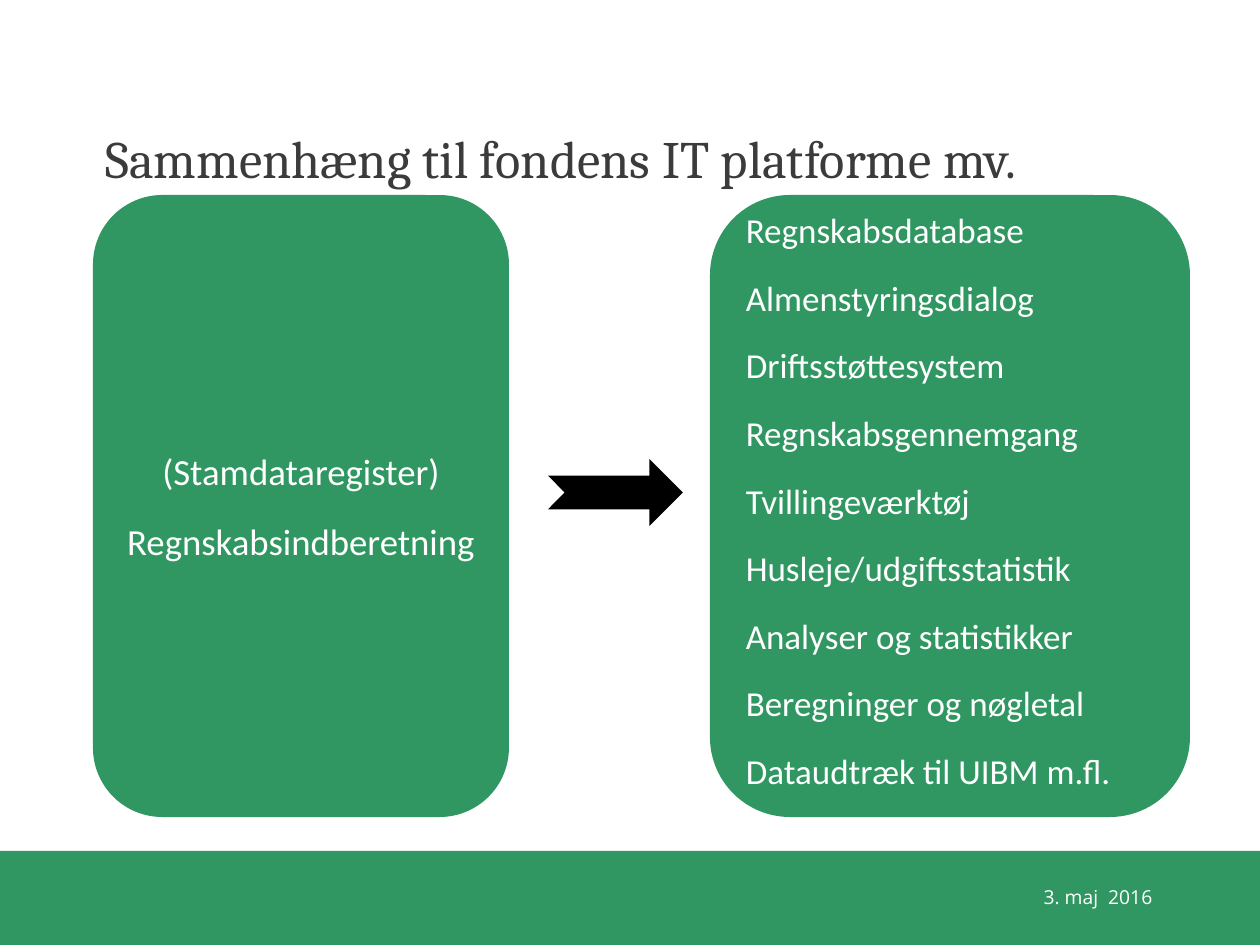
"""Build a slide showing how reported accounts feed the fund's IT platforms."""
from pptx import Presentation
from pptx.dml.color import RGBColor
from pptx.enum.shapes import MSO_SHAPE
from pptx.enum.text import MSO_ANCHOR, PP_ALIGN
from pptx.util import Pt

TITLE = "Sammenhæng til fondens IT platforme mv."
DATE = "3. maj  2016"
SOURCES = ["(Stamdataregister)", "Regnskabsindberetning"]
PLATFORMS = [
    "Regnskabsdatabase",
    "Almenstyringsdialog",
    "Driftsstøttesystem",
    "Regnskabsgennemgang",
    "Tvillingeværktøj",
    "Husleje/udgiftsstatistik",
    "Analyser og statistikker",
    "Beregninger og nøgletal",
    "Dataudtræk til UIBM m.fl.",
]

THEME = {
    "green": RGBColor(0x30, 0x97, 0x62),
    "black": RGBColor(0, 0, 0),
    "title": {"name": "Cambria", "size": Pt(30), "color": RGBColor(0x3B, 0x3B, 0x3B)},
    "source": {"name": "Calibri", "size": Pt(21), "color": RGBColor(255, 255, 255)},
    "platform": {"name": "Calibri", "size": Pt(20), "color": RGBColor(255, 255, 255)},
    "date": {"name": "Open Sans", "size": Pt(11), "color": RGBColor(255, 255, 255)},
}
WIDTH, HEIGHT = 1260, 945
FOOTER_TOP = 851
BOX_TOP, BOX_HEIGHT = 195, 622
PLATFORM_LIFT = 18


def px(value):
    return int(value * 914400 / 126)


def add_block(slide, preset, bounds, color):
    shape = slide.shapes.add_shape(preset, *map(px, bounds))
    shape.shadow.inherit = False
    shape.fill.solid()
    shape.fill.fore_color.rgb = color
    shape.line.fill.background()
    return shape


def write(shape, lines, style, align, anchor, wrap=True, gap=0):
    frame = shape.text_frame
    frame.word_wrap = wrap
    frame.vertical_anchor = anchor
    for index, line in enumerate(lines):
        paragraph = frame.paragraphs[0] if index == 0 else frame.add_paragraph()
        paragraph.alignment = align
        if index:
            paragraph.space_before = Pt(gap)
        run = paragraph.add_run()
        run.text = line
        for name, value in THEME[style].items():
            if name == "color":
                run.font.color.rgb = value
            else:
                setattr(run.font, name, value)


def main():
    presentation = Presentation()
    presentation.slide_width, presentation.slide_height = px(WIDTH), px(HEIGHT)
    slide = presentation.slides.add_slide(presentation.slide_layouts[6])

    footer = (0, FOOTER_TOP, WIDTH, HEIGHT - FOOTER_TOP)
    add_block(slide, MSO_SHAPE.RECTANGLE, footer, THEME["green"])

    labels = [
        ((93, 38, 1068, 157), TITLE, "title", PP_ALIGN.LEFT, MSO_ANCHOR.BOTTOM),
        ((910, 880, 255, 34), DATE, "date", PP_ALIGN.RIGHT, MSO_ANCHOR.MIDDLE),
    ]
    for bounds, text, style, align, anchor in labels:
        label = slide.shapes.add_textbox(*map(px, bounds))
        write(label, [text], style, align, anchor)

    boxes = [
        (93, 416, SOURCES, "source", PP_ALIGN.CENTER, 15, 6),
        (710, 480, PLATFORMS, "platform", PP_ALIGN.LEFT, 14.6, PLATFORM_LIFT),
    ]
    for left, width, lines, style, align, gap, bottom in boxes:
        bounds = (left, BOX_TOP, width, BOX_HEIGHT)
        box = add_block(slide, MSO_SHAPE.ROUNDED_RECTANGLE, bounds, THEME["green"])
        box.text_frame.margin_bottom = px(bottom)
        write(box, lines, style, align, MSO_ANCHOR.MIDDLE, False, gap)

    add_block(slide, MSO_SHAPE.NOTCHED_RIGHT_ARROW, (548, 459, 135, 67), THEME["black"])
    presentation.save("out.pptx")


if __name__ == "__main__":
    main()
